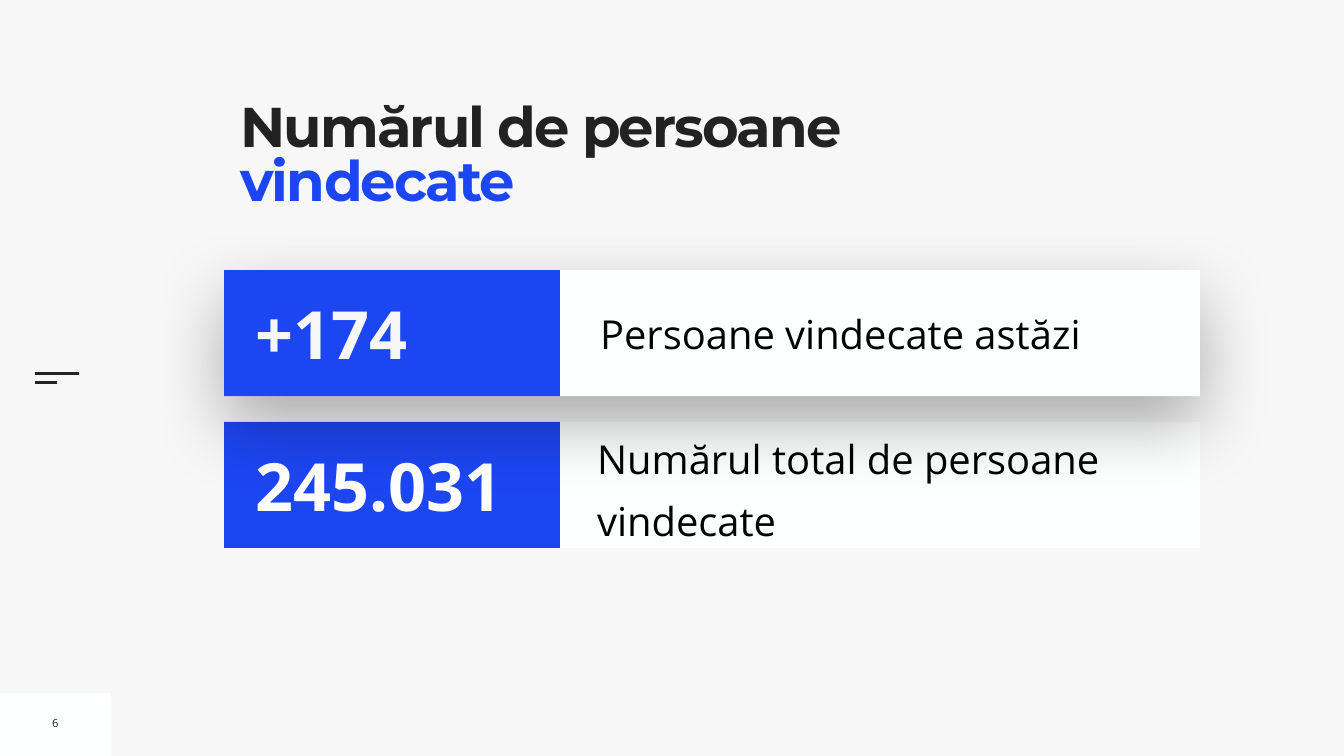
from dataclasses import dataclass

from lxml import etree
from pptx import Presentation
from pptx import util as u
from pptx.dml.color import RGBColor
from pptx.enum import shapes, text
from pptx.oxml import ns


@dataclass(frozen=True)
class Theme:
    background: str = "F7F7F7"
    panel: str = "FEFFFF"
    accent: str = "1D46F3"
    dark: str = "222222"
    black: str = "000000"
    white: str = "FFFFFF"
    heading_font: str = "Montserrat"
    body_font: str = "Open Sans"
    title_size: int = 80
    figure_size: int = 95
    label_size: int = 57
    number_size: int = 16
    line_width: int = 3


class SlideBuilder:
    def __init__(self, slide, theme):
        self.slide = slide
        self.theme = theme
        self.container = slide.shapes
        slide.background.fill.solid()
        slide.background.fill.fore_color.rgb = RGBColor.from_string(theme.background)

    def start_group(self):
        self.container = self.slide.shapes.add_group_shape().shapes

    def fill(self, shape, color):
        shape.fill.solid()
        shape.fill.fore_color.rgb = RGBColor.from_string(color)

    def rectangle(self, box, color, shadow=False):
        shape = self.container.add_shape(shapes.MSO_SHAPE.RECTANGLE, *map(u.Inches, box))
        self.fill(shape, color)
        shape.line.fill.background()
        shape.shadow.inherit = False
        if shadow:
            effects = shape._element.spPr.find(ns.qn("a:effectLst"))
            outer = etree.SubElement(
                effects, ns.qn("a:outerShdw"), blurRad=str(u.Pt(100)),
                dist=str(u.Pt(40)), dir="5400000", rotWithShape="0")
            color_node = etree.SubElement(outer, ns.qn("a:srgbClr"), val=self.theme.black)
            etree.SubElement(color_node, ns.qn("a:alpha"), val="30000")

    def line(self, left, right, top):
        connector = self.container.add_connector(
            shapes.MSO_CONNECTOR.STRAIGHT, *map(u.Inches, (left, top, right, top)))
        connector.line.color.rgb = RGBColor.from_string(self.theme.dark)
        connector.line.width = u.Pt(self.theme.line_width)
        etree.SubElement(connector._element.spPr, ns.qn("a:effectLst"))

    def set_margins(self, frame, margin):
        frame.margin_left = frame.margin_right = u.Inches(margin)
        frame.margin_top = frame.margin_bottom = u.Inches(margin)

    def text_box(self, box, content, size, color, bold=False, margin=0.1,
                 wrap=True, align=text.PP_ALIGN.LEFT):
        frame = self.container.add_textbox(*map(u.Inches, box)).text_frame
        frame.word_wrap = wrap
        frame.vertical_anchor = text.MSO_ANCHOR.MIDDLE
        self.set_margins(frame, margin)
        paragraph = frame.paragraphs[0]
        paragraph.text = content
        paragraph.alignment = align
        paragraph.font.name = self.theme.body_font
        paragraph.font.size = u.Pt(size)
        paragraph.font.bold = bold
        paragraph.font.color.rgb = RGBColor.from_string(color)
        return paragraph

    def title(self, box, parts):
        shape = self.slide.shapes.title
        shape.left, shape.top, shape.width, shape.height = map(u.Inches, box)
        self.fill(shape, self.theme.background)
        frame = shape.text_frame
        frame.auto_size = text.MSO_AUTO_SIZE.NONE
        frame.word_wrap = True
        frame.vertical_anchor = text.MSO_ANCHOR.TOP
        self.set_margins(frame, 0)
        paragraph = frame.paragraphs[0]
        paragraph.alignment = text.PP_ALIGN.LEFT
        paragraph.line_spacing = 0.8
        paragraph.font.name = self.theme.heading_font
        paragraph.font.size = u.Pt(self.theme.title_size)
        paragraph.font.bold = True
        for content, color in parts:
            run = paragraph.add_run()
            run.text = content
            run.font.color.rgb = RGBColor.from_string(color)
            run._r.get_or_add_rPr().set("spc", "-270")

    def statistic(self, top, figure, figure_color, label, label_box, margin=0.1, shadow=False):
        self.start_group()
        self.rectangle((4.45, top, 19.36, 2.5), self.theme.panel, shadow)
        paragraph = self.text_box(label_box, label, self.theme.label_size,
                                  self.theme.black, margin=margin)
        self.rectangle((4.45, top, 6.66, 2.5), self.theme.accent)
        self.text_box((4.98, top + 0.35, 6.03, 1.8), figure,
                      self.theme.figure_size, figure_color, bold=True)
        return paragraph


def main():
    theme = Theme()
    presentation = Presentation()
    presentation.slide_width = u.Inches(26.67)
    presentation.slide_height = u.Inches(15)
    slide = presentation.slides.add_slide(presentation.slide_layouts[5])
    builder = SlideBuilder(slide, theme)

    builder.rectangle((0, 13.76, 2.2, 1.24), theme.panel)
    builder.line(0.69, 1.57, 7.41)
    builder.line(0.69, 1.13, 7.59)
    builder.title((4.77, 2.07, 13.01, 2.73),
                  [("Numărul de persoane ", theme.dark), ("vindecate", theme.accent)])
    builder.text_box((0.93, 14.09, 0.34, 0.51), "6", theme.number_size, theme.dark,
                     wrap=False, align=text.PP_ALIGN.CENTER)

    total_label = builder.statistic(
        8.37, "245.031", theme.white, "Numărul total de persoane vindecate",
        (11.85, 8.39, 11.95, 2.36), margin=0)
    total_label.line_spacing = 1.3
    total_label.space_before = u.Pt(20)
    builder.statistic(5.36, "+174", theme.background, "Persoane vindecate astăzi",
                      (11.81, 6.03, 11.76, 1.16), shadow=True)

    presentation.save("out.pptx")


if __name__ == "__main__":
    main()
